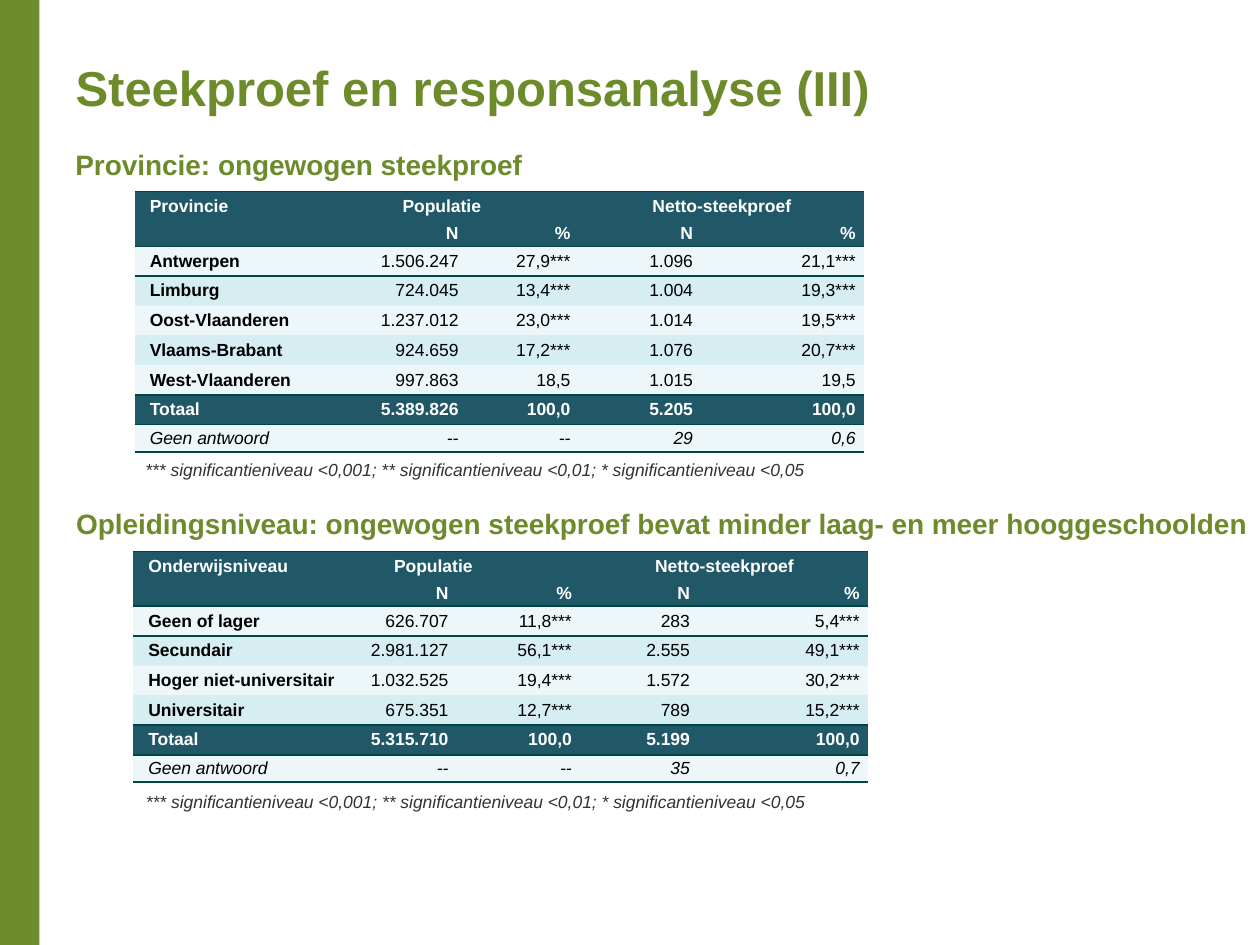
from dataclasses import dataclass

from lxml import etree
from pptx import Presentation
from pptx.dml.color import RGBColor
from pptx.enum.shapes import MSO_SHAPE
from pptx.enum.text import MSO_ANCHOR, MSO_AUTO_SIZE, PP_ALIGN
from pptx.oxml.ns import qn
from pptx.util import Pt

RECTANGLE = MSO_SHAPE.RECTANGLE
TOP, MIDDLE = MSO_ANCHOR.TOP, MSO_ANCHOR.MIDDLE
NO_AUTOFIT = MSO_AUTO_SIZE.NONE
LEFT, CENTER, RIGHT = PP_ALIGN.LEFT, PP_ALIGN.CENTER, PP_ALIGN.RIGHT
JUSTIFY = PP_ALIGN.JUSTIFY
PLAIN_TABLE_STYLE = "{2D5ABB26-0587-4C30-8999-92F81FD0307C}"


@dataclass(frozen=True)
class Theme:
    font: str = "Arial"
    bar: str = "6E8C2B"
    heading: str = "6D8B2B"
    note: str = "333333"
    band_dark: str = "215868"
    band_pale: str = "EDF7F9"
    band_mid: str = "D6EDF2"
    rule: str = "004644"
    black: str = "000000"
    white: str = "FFFFFF"
    title_size: int = 28
    heading_size: int = 16
    table_size: int = 10


THEME = Theme()

TITLE = "Steekproef en responsanalyse (III)"
SIGNIFICANCE = ("*** significantieniveau <0,001; ** significantieniveau <0,01; "
                "* significantieniveau <0,05")
PROVINCES = [
    ("Antwerpen", "1.506.247", "27,9***", "1.096", "21,1***"),
    ("Limburg", "724.045", "13,4***", "1.004", "19,3***"),
    ("Oost-Vlaanderen", "1.237.012", "23,0***", "1.014", "19,5***"),
    ("Vlaams-Brabant", "924.659", "17,2***", "1.076", "20,7***"),
    ("West-Vlaanderen", "997.863", "18,5", "1.015", "19,5"),
    ("Totaal", "5.389.826", "100,0", "5.205", "100,0"),
    ("Geen antwoord", "--", "--", "29", "0,6"),
]
EDUCATION = [
    ("Geen of lager", "626.707", "11,8***", "283", "5,4***"),
    ("Secundair", "2.981.127", "56,1***", "2.555", "49,1***"),
    ("Hoger niet-universitair", "1.032.525", "19,4***", "1.572", "30,2***"),
    ("Universitair", "675.351", "12,7***", "789", "15,2***"),
    ("Totaal", "5.315.710", "100,0", "5.199", "100,0"),
    ("Geen antwoord", "--", "--", "35", "0,7"),
]


def add_run(paragraph, text, size, color, bold=False, italic=False):
    run = paragraph.add_run()
    run.text = text
    font = run.font
    font.name, font.size = THEME.font, Pt(size)
    font.bold, font.italic = bold, italic
    font.color.rgb = RGBColor.from_string(color)


def add_side_bar(slide, left, top, width, height):
    bar = slide.shapes.add_shape(RECTANGLE, Pt(left), Pt(top), Pt(width), Pt(height))
    bar.shadow.inherit = False
    bar.fill.solid()
    bar.fill.fore_color.rgb = RGBColor.from_string(THEME.bar)
    bar.line.fill.background()


def place_title(slide, left, top, width, height):
    title = slide.shapes.title
    title.left, title.top = Pt(left), Pt(top)
    title.width, title.height = Pt(width), Pt(height)
    frame = title.text_frame
    frame.word_wrap, frame.auto_size = False, NO_AUTOFIT
    frame.vertical_anchor = TOP
    frame.paragraphs[0].alignment = LEFT
    add_run(frame.paragraphs[0], TITLE, THEME.title_size, THEME.heading, bold=True)


def add_heading(slide, text, left, top, width, height):
    frame = slide.shapes.add_textbox(Pt(left), Pt(top), Pt(width), Pt(height)).text_frame
    frame.word_wrap = False
    add_run(frame.paragraphs[0], text, THEME.heading_size, THEME.heading, bold=True)


def add_note(slide, left, top, width, height):
    frame = slide.shapes.add_textbox(Pt(left), Pt(top), Pt(width), Pt(height)).text_frame
    frame.word_wrap, frame.vertical_anchor = True, MIDDLE
    frame.paragraphs[0].alignment = JUSTIFY
    add_run(frame.paragraphs[0], SIGNIFICANCE, THEME.table_size, THEME.note, italic=True)


def rule_cell(cell, sides):
    """Draw border lines; they must precede the fill in the cell properties."""
    properties = cell._tc.get_or_add_tcPr()
    for position, side in enumerate(sides):
        line = etree.Element(qn(f"a:{side}"), w=str(Pt(1)))
        fill = etree.SubElement(line, qn("a:solidFill"))
        etree.SubElement(fill, qn("a:srgbClr"), val=THEME.rule)
        properties.insert(position, line)


def fill_cell(cell, text, fill, color, align, indent=0, bold=False, italic=False):
    cell.margin_left = cell.margin_right = Pt(5)
    cell.margin_top = cell.margin_bottom = Pt(0)
    cell.vertical_anchor = MIDDLE
    cell.fill.solid()
    cell.fill.fore_color.rgb = RGBColor.from_string(fill)
    paragraph = cell.text_frame.paragraphs[0]
    paragraph.alignment = align
    if indent:
        paragraph._p.get_or_add_pPr().set("marL", str(Pt(indent)))
    if text:
        add_run(paragraph, text, THEME.table_size, color, bold, italic)
    else:  # keeps an empty cell from stretching its row
        etree.SubElement(paragraph._p, qn("a:endParaRPr"), sz=str(THEME.table_size * 100))


def add_sample_table(slide, category, records, column_widths, left, top,
                     population_align=CENTER, population_indent=0):
    rows = [(category, "Populatie", "", "Netto-steekproef", ""),
            ("", "N", "%", "N", "%"), *records]
    total, last = len(rows) - 2, len(rows) - 1
    heights = [17, 14.4] + [17] * (len(records) - 1) + [15.6]
    table_frame = slide.shapes.add_table(len(rows), len(column_widths), Pt(left), Pt(top),
                                         Pt(sum(column_widths)), Pt(sum(heights)))
    table = table_frame.table
    table.first_row = table.horz_banding = False
    table._tbl.tblPr.find(qn("a:tableStyleId")).text = PLAIN_TABLE_STYLE
    for column, width in zip(table.columns, column_widths):
        column.width = Pt(width)
    for row, height in zip(table.rows, heights):
        row.height = Pt(height)

    for r, values in enumerate(rows):
        dark = r < 2 or r == total
        pale = r == last or r % 2 == 0
        fill = THEME.band_dark if dark else THEME.band_pale if pale else THEME.band_mid
        color = THEME.white if dark else THEME.black
        sides = [side for side, ruled in (("lnT", (0, 2, total, last)),
                                          ("lnB", (1, total - 1, total, last)))
                 if r in ruled]
        for c, text in enumerate(values):
            align, indent = (LEFT, 3.6) if c == 0 else (RIGHT, 0)
            if r == 0 and c == 1:
                align, indent = population_align, population_indent
            elif r == 0 and c == 3:
                align = CENTER
            cell = table.cell(r, c)
            fill_cell(cell, text, fill, color, align, indent,
                      bold=dark or (c == 0 and r != last), italic=r == last)
            rule_cell(cell, sides)

    # Each group heading covers its N and % columns
    for c in (1, 3):
        table.cell(0, c).merge(table.cell(0, c + 1))


def main():
    presentation = Presentation()
    presentation.slide_width, presentation.slide_height = Pt(720), Pt(540)
    slide = presentation.slides.add_slide(presentation.slide_layouts[5])

    add_side_bar(slide, 0, 0, 22.5, 540)
    place_title(slide, 36, 29, 474, 41)

    # Province
    add_heading(slide, "Provincie: ongewogen steekproef", 36, 81, 273, 26.5)
    add_sample_table(slide, "Provincie", PROVINCES, [97, 93, 64, 70, 93], 77, 109.4)
    add_note(slide, 76, 258.8, 419, 19.4)

    # Education level
    add_heading(slide, "Opleidingsniveau: ongewogen steekproef bevat minder laag- "
                "en meer hooggeschoolden", 36.5, 286, 693, 26.5)
    add_sample_table(slide, "Onderwijsniveau", EDUCATION, [124.5, 60.5, 70.5, 67.5, 97],
                     76.2, 315, population_align=LEFT, population_indent=19.5)
    add_note(slide, 76.3, 448.6, 419, 19.4)

    presentation.save("out.pptx")


if __name__ == "__main__":
    main()
